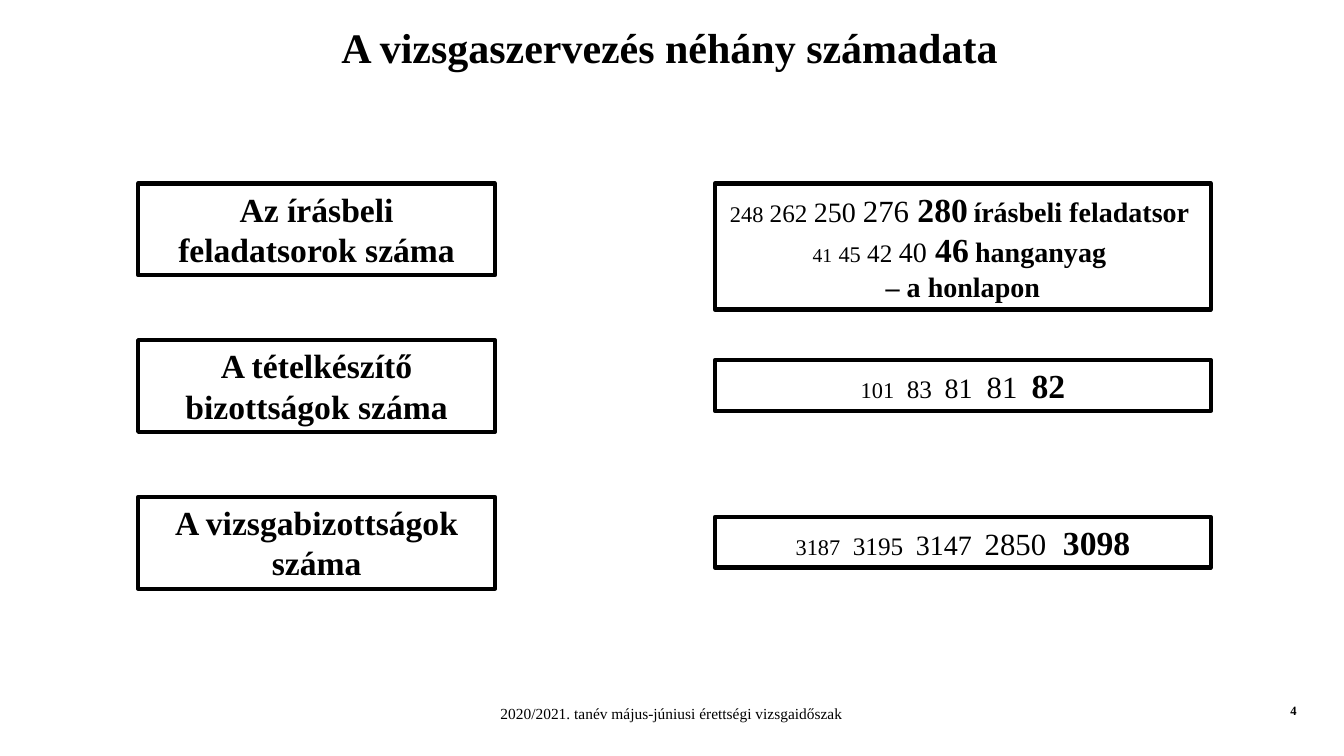
from pptx import Presentation
from pptx.dml.color import RGBColor
from pptx.enum.shapes import MSO_SHAPE as Shape
from pptx.enum.text import MSO_ANCHOR as Anchor, PP_ALIGN as Align
from pptx.util import Inches, Pt

BLACK = RGBColor(0x00, 0x00, 0x00)
WHITE = RGBColor(0xFF, 0xFF, 0xFF)
FONT = "Times New Roman"


def write(para, text, size, bold=False, align=Align.CENTER):
    para.alignment = align
    for index, line in enumerate(text.split("\n")):
        if index:
            para.add_line_break()
        if line:
            span = para.add_run()
            span.text = line
            span.font.name = FONT
            span.font.size = Pt(size)
            span.font.bold = bold
            span.font.color.rgb = BLACK


def add_frame(page, left, top, width, height, spans):
    box = page.shapes.add_shape(
        Shape.RECTANGLE, Inches(left), Inches(top), Inches(width), Inches(height)
    )
    box.shadow.inherit = False
    box.fill.solid()
    box.fill.fore_color.rgb = WHITE
    box.line.color.rgb = BLACK
    box.line.width = Pt(3)
    box.text_frame.word_wrap = True
    box.text_frame.vertical_anchor = Anchor.TOP
    for text, size, bold in spans:
        write(box.text_frame.paragraphs[0], text, size, bold=bold)


deck = Presentation()
deck.slide_width = Inches(13.33)
deck.slide_height = Inches(7.5)
page = deck.slides.add_slide(deck.slide_layouts[5])

title = page.shapes.title
title.left, title.top = Inches(0.79), Inches(0.2)
title.width, title.height = Inches(11.81), Inches(0.59)
title.text_frame.word_wrap = True
title.text_frame.vertical_anchor = Anchor.MIDDLE
heading = title.text_frame.paragraphs[0]
heading.line_spacing = 0.9
write(heading, "A vizsgaszervezés néhány számadata ", 30, bold=True)

papers = [
    ("248", 16, False), (" 262 ", 18, False), ("250 ", 20, False),
    ("276", 22, False), (" 280", 24, True), (" ", 16, True),
    ("írásbeli feladatsor \n", 20, True),
    ("41", 14, False), (" ", 18, False), ("45", 16, False),
    (" 42 ", 18, False), ("40", 20, False), (" 46", 24, True),
    (" ", 18, True), ("hanganyag \n– a honlapon", 20, True),
]
committees = [
    ("101", 16, False), ("  83  ", 18, False), ("81  ", 20, False),
    ("81", 22, False), ("  ", 20, False), ("82", 24, True),
]
boards = [
    ("3187", 16, False), ("  3195  ", 18, False), ("3147", 20, False),
    ("  ", 18, False), ("2850", 22, False), ("  3098", 24, True),
]
rows = [
    ("Az írásbeli feladatsorok száma", papers, 0, 1.25),
    ("A tételkészítő bizottságok száma", committees, 0.2, 0.5),
    ("A vizsgabizottságok száma", boards, 0.2, 0.5),
]
for index, (label, figures, offset, height) in enumerate(rows):
    top = 1.82 + 1.555 * index
    add_frame(page, 1.37, top, 3.54, 0.91, [(label, 24, True)])
    add_frame(page, 7.09, top + offset, 4.92, height, figures)

footer = page.shapes.add_textbox(Inches(3.59), Inches(6.94), Inches(6.14), Inches(0.29))
footer.text_frame.word_wrap = True
write(
    footer.text_frame.paragraphs[0],
    "2020/2021. tanév május-júniusi érettségi vizsgaidőszak",
    11,
)

number = page.shapes.add_textbox(Inches(12.7), Inches(6.92), Inches(0.33), Inches(0.25))
number.text_frame.word_wrap = False
write(number.text_frame.paragraphs[0], "4", 9, bold=True, align=Align.LEFT)

deck.save("out.pptx")
